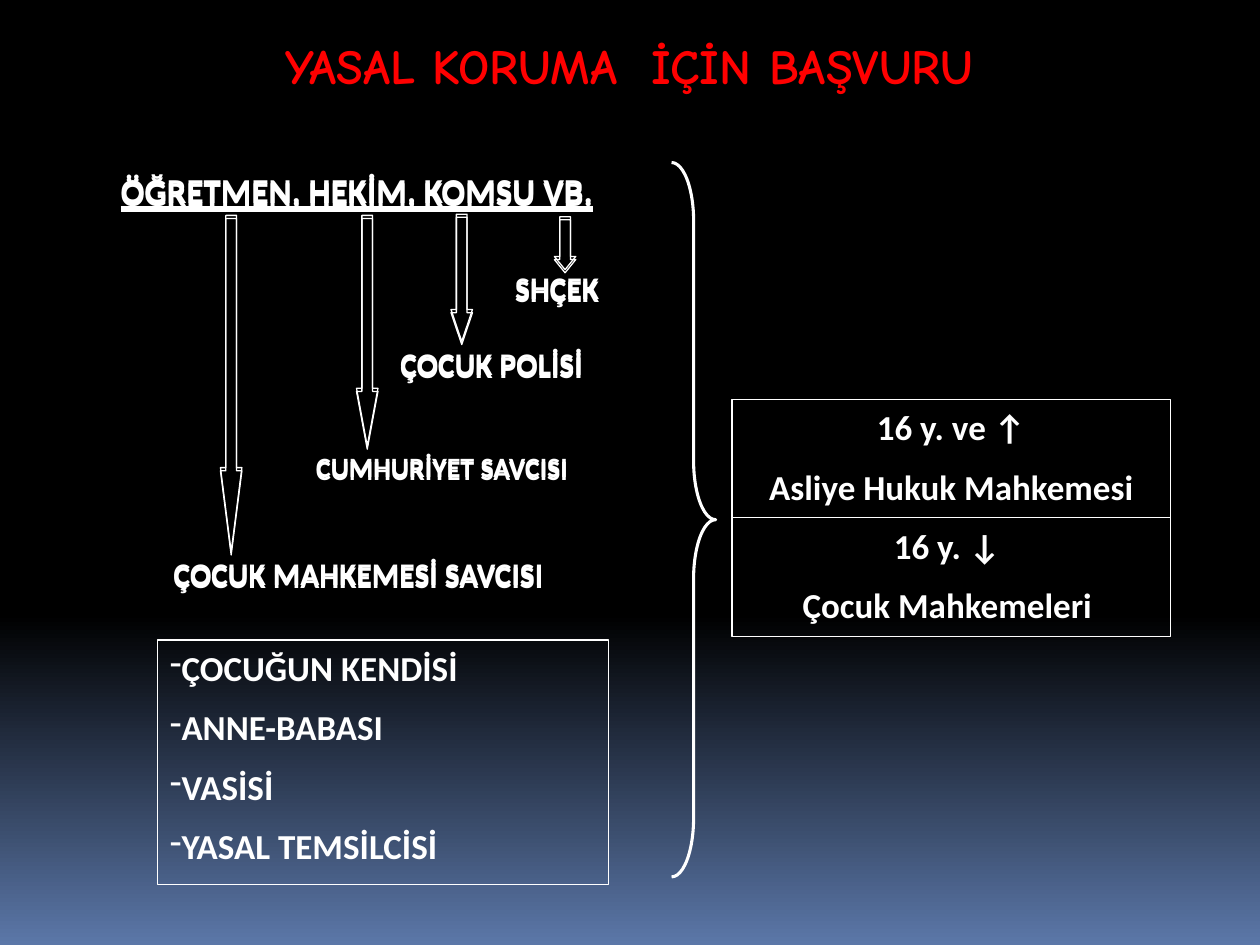
from dataclasses import dataclass

from lxml.etree import SubElement
from pptx import Presentation
from pptx.dml.color import RGBColor
from pptx.enum.shapes import MSO_SHAPE
from pptx.enum.text import MSO_ANCHOR, MSO_AUTO_SIZE, PP_ALIGN
from pptx.oxml.ns import qn
from pptx.util import Inches, Pt


@dataclass(frozen=True)
class Theme:
    title: RGBColor = RGBColor(0xFF, 0x00, 0x00)
    ink: RGBColor = RGBColor(0xFF, 0xFF, 0xFF)
    night: RGBColor = RGBColor(0x00, 0x00, 0x00)
    horizon: RGBColor = RGBColor(0x5B, 0x77, 0xA8)
    title_font: str = "Comic Neue"
    font: str = "Calibri"
    title_size: int = 28
    body: int = 20
    label: int = 18
    small: int = 16
    thin: float = 0.75
    thick: float = 1.75


THEME = Theme()
SLIDE_W, SLIDE_H = 10, 7.5
ECHO = 0.025  # downward offset of the diagram's second layer
ARROW_W = 0.17
HEADING = "ÖĞRETMEN, HEKİM, KOMŞU VB."

# text, left, top, width, height, size
AUTHORITIES = [
    ("CUMHURİYET SAVCISI", 2.41, 3.52, 2.92, 0.37, THEME.small),
    ("ÇOCUK MAHKEMESİ SAVCISI", 1.28, 4.35, 4, 0.4, THEME.label),
    ("SHÇEK", 3.99, 2.08, 1.08, 0.4, THEME.label),
    ("ÇOCUK POLİSİ", 3.08, 2.68, 2.08, 0.4, THEME.label),
]
# left, top, length
ARROWS = [(4.4, 1.72, 0.42), (3.58, 1.7, 1.01), (2.83, 1.71, 1.83), (1.75, 1.71, 2.67)]
APPLICANTS = ["ÇOCUĞUN KENDİSİ", "ANNE-BABASI", "VASİSİ", "YASAL TEMSİLCİSİ"]
COURTS = [
    ["16 y. ve ↑", "Asliye Hukuk Mahkemesi"],
    ["16 y. ↓ ", "Çocuk Mahkemeleri "],
]


def inches(*lengths):
    return [Inches(n) for n in lengths]


def set_text(sp, lines, size=THEME.body, color=THEME.ink, font=THEME.font,
             align=PP_ALIGN.LEFT, underline=None, bullet=None):
    tf = sp.text_frame
    tf.word_wrap = True
    tf.auto_size = MSO_AUTO_SIZE.SHAPE_TO_FIT_TEXT
    tf.vertical_anchor = MSO_ANCHOR.TOP
    for i, line in enumerate(lines):
        p = tf.add_paragraph() if i else tf.paragraphs[0]
        p.alignment = align
        p.space_before = Pt(size / 2 if i else 0)
        if bullet:
            SubElement(p._p.get_or_add_pPr(), qn("a:buChar"), char=bullet)
        r = p.add_run()
        r.text = line
        r.font.size = Pt(size)
        r.font.name = font
        r.font.bold = True
        r.font.underline = underline
        r.font.color.rgb = color


def add_text(slide, box, text, **fmt):
    set_text(slide.shapes.add_textbox(*inches(*box)), [text], **fmt)


def add_outline(slide, kind, box, width=THEME.thin, adjustments=()):
    sp = slide.shapes.add_shape(kind, *inches(*box))
    sp.shadow.inherit = False
    sp.fill.background()
    sp.line.color.rgb = THEME.ink
    sp.line.width = Pt(width)
    for i, value in enumerate(adjustments):
        sp.adjustments[i] = value
    return sp


def add_box(slide, box, lines, **fmt):
    set_text(add_outline(slide, MSO_SHAPE.RECTANGLE, box), lines, **fmt)


def add_arrow(slide, left, top, length):
    """Draw a down arrow whose head takes a quarter of its length."""
    add_outline(slide, MSO_SHAPE.DOWN_ARROW, (left, top, ARROW_W, length),
                adjustments=(0.5, length / 4 / ARROW_W))


def add_referrals(slide, shift):
    add_text(slide, (0, 1.29 + shift, 5.67, 0.43), HEADING,
             align=PP_ALIGN.CENTER, underline=True)
    for text, left, top, width, height, size in AUTHORITIES:
        add_text(slide, (left, top + shift, width, height), text, size=size)
    for left, top, length in ARROWS:
        add_arrow(slide, left, top + shift, length)


def add_courts(slide):
    left, top, width, height = 5.81, 3.17, 3.48, 0.94
    for row, lines in enumerate(COURTS):
        add_box(slide, (left, top + row * height, width, height), lines,
                align=PP_ALIGN.CENTER)


def set_background(slide):
    fill = slide.background.fill
    fill.gradient()
    fill.gradient_angle = 270
    stops = [(0.65, THEME.night), (1, THEME.horizon)]
    for stop, (position, color) in zip(fill.gradient_stops, stops):
        stop.position = position
        stop.color.rgb = color


def set_title(slide, text):
    title = slide.shapes.title
    title.left, title.top, title.width, title.height = inches(1.58, 0.23, 6.83, 0.57)
    set_text(title, [text], size=THEME.title_size, color=THEME.title,
             font=THEME.title_font, align=PP_ALIGN.CENTER)


def main():
    prs = Presentation()
    prs.slide_width, prs.slide_height = inches(SLIDE_W, SLIDE_H)
    slide = prs.slides.add_slide(prs.slide_layouts.get_by_name("Title Only"))
    set_background(slide)
    set_title(slide, "YASAL KORUMA  İÇİN BAŞVURU")
    add_courts(slide)
    add_box(slide, (1.25, 5.08, 3.58, 1.94), APPLICANTS, bullet="-")
    add_outline(slide, MSO_SHAPE.RIGHT_BRACE, (5.33, 1.29, 0.35, 5.67),
                THEME.thick, adjustments=(1.33, 0.5))
    for shift in (0, ECHO):
        add_referrals(slide, shift)
    prs.save("out.pptx")


if __name__ == "__main__":
    main()
